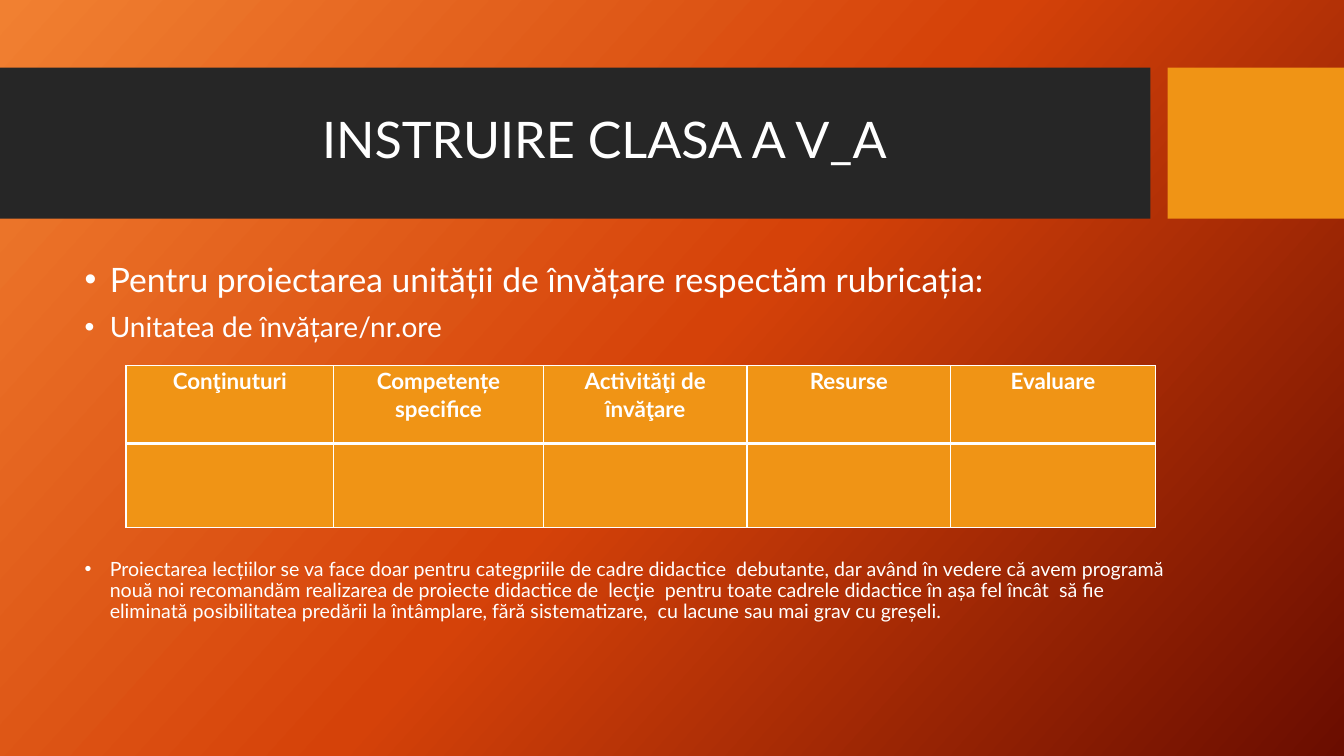
from copy import deepcopy

from lxml import etree
from pptx import Presentation
from pptx import util as u
from pptx.dml.color import RGBColor
from pptx.enum import shapes, text
from pptx.oxml import ns

WHITE = RGBColor(0xFF, 0xFF, 0xFF)
CHARCOAL = RGBColor(0x26, 0x26, 0x26)
AMBER = RGBColor(0xF0, 0x94, 0x15)
GRADIENT = [
    (0, RGBColor(0xF1, 0x80, 0x31)),
    (0.5, RGBColor(0xD5, 0x42, 0x09)),
    (1, RGBColor(0x6A, 0x0D, 0x00)),
]
FONT = "Lato"

HEADERS = ["Conţinuturi", "Competențe specifice", "Activităţi de învăţare", "Resurse", "Evaluare"]
COLUMN_WIDTHS = [2.06, 2.08, 2.02, 2.02, 2.03]
ROW_HEIGHTS = [0.77, 0.83]
BULLETS = [
    ("Pentru proiectarea unității de învățare respectăm rubricația:", 24, 0),
    ("Unitatea de învățare/nr.ore", 20, 10),
    ("Proiectarea lecțiilor se va face doar pentru categpriile de cadre didactice  debutante, "
     "dar având în vedere că avem programă nouă noi recomandăm realizarea de proiecte didactice de  "
     "lecţie  pentru toate cadrele didactice în așa fel încât  să fie eliminată posibilitatea "
     "predării la întâmplare, fără sistematizare,  cu lacune sau mai grav cu greșeli.", 14, 154),
]


def write(para, words, size, bold=False, align=text.PP_ALIGN.LEFT, spacing=0.9,
          before=0, after=0, bullet=False):
    if bullet:
        properties = para._p.get_or_add_pPr()
        properties.set("marL", str(u.Inches(0.25)))
        properties.set("indent", str(u.Inches(-0.25)))
        etree.SubElement(properties, ns.qn("a:buFont"), typeface="Arial")
        etree.SubElement(properties, ns.qn("a:buChar"), char="•")
    para.alignment = align
    para.line_spacing = spacing
    para.space_before = u.Pt(before)
    para.space_after = u.Pt(after)
    span = para.add_run()
    span.text = words
    span.font.name = FONT
    span.font.size = u.Pt(size)
    span.font.bold = bold
    span.font.color.rgb = WHITE


class SlideBuilder:
    def __init__(self, page):
        self.page = page

    def background(self, stops, angle):
        fill = self.page.background.fill
        fill.gradient()
        first = self.page.element.find(".//" + ns.qn("a:gs"))
        first.addnext(deepcopy(first))
        for stop, (position, color) in zip(fill.gradient_stops, stops):
            stop.position = position
            stop.color.rgb = color
        fill.gradient_angle = 360 - angle

    def block(self, left, top, width, height, color):
        block = self.page.shapes.add_shape(
            shapes.MSO_SHAPE.RECTANGLE, *map(u.Inches, (left, top, width, height)))
        block.shadow.inherit = False
        block.fill.solid()
        block.fill.fore_color.rgb = color
        block.line.fill.background()

    def text_box(self, left, top, width, height, anchor=text.MSO_ANCHOR.TOP):
        box = self.page.shapes.add_textbox(*map(u.Inches, (left, top, width, height)))
        box.text_frame.word_wrap = True
        box.text_frame.vertical_anchor = anchor
        return box.text_frame

    def title(self, words):
        frame = self.text_box(0.74, 0.82, 10.51, 1.18, text.MSO_ANCHOR.MIDDLE)
        write(frame.paragraphs[0], words, 36, align=text.PP_ALIGN.CENTER)

    def bullets(self, items):
        frame = self.text_box(0.74, 2.56, 11.12, 3.94)
        for index, (words, size, before) in enumerate(items):
            para = frame.add_paragraph() if index else frame.paragraphs[0]
            write(para, words, size, before=before, bullet=True)

    def border(self, cell, side, width):
        line = etree.SubElement(cell._tc.get_or_add_tcPr(), ns.qn("a:ln" + side),
                                w=str(u.Pt(width)))
        fill = etree.SubElement(line, ns.qn("a:solidFill"))
        etree.SubElement(fill, ns.qn("a:srgbClr"), val=str(WHITE))

    def table(self, left, top, headers, widths, heights):
        table = self.page.shapes.add_table(
            len(heights), len(widths),
            *map(u.Inches, (left, top, sum(widths), sum(heights)))).table
        table.first_row = table.horz_banding = False
        for column, width in zip(table.columns, widths):
            column.width = u.Inches(width)
        for row, height in zip(table.rows, heights):
            row.height = u.Inches(height)
        for index, cell in enumerate(table.iter_cells()):
            is_header = index < len(headers)
            for side in "LRTB":
                heavy = side == ("B" if is_header else "T")
                self.border(cell, side, 3 if heavy else 1)
            cell.fill.solid()
            cell.fill.fore_color.rgb = AMBER
            if is_header:
                cell.margin_left = cell.margin_right = u.Inches(0.07)
                cell.margin_top = cell.margin_bottom = 0
                write(cell.text_frame.paragraphs[0], headers[index], 16, bold=True,
                      align=text.PP_ALIGN.CENTER, spacing=1.06, after=8)


def main():
    deck = Presentation()
    deck.slide_width = u.Inches(13.33)
    deck.slide_height = u.Inches(7.5)
    builder = SlideBuilder(deck.slides.add_slide(deck.slide_layouts[6]))
    builder.background(GRADIENT, 42)
    builder.block(0, 0.67, 11.41, 1.5, CHARCOAL)
    builder.block(11.58, 0.67, 1.75, 1.5, AMBER)
    builder.title("INSTRUIRE CLASA A V_A")
    builder.bullets(BULLETS)
    builder.table(1.25, 3.63, HEADERS, COLUMN_WIDTHS, ROW_HEIGHTS)
    deck.save("out.pptx")


if __name__ == "__main__":
    main()
